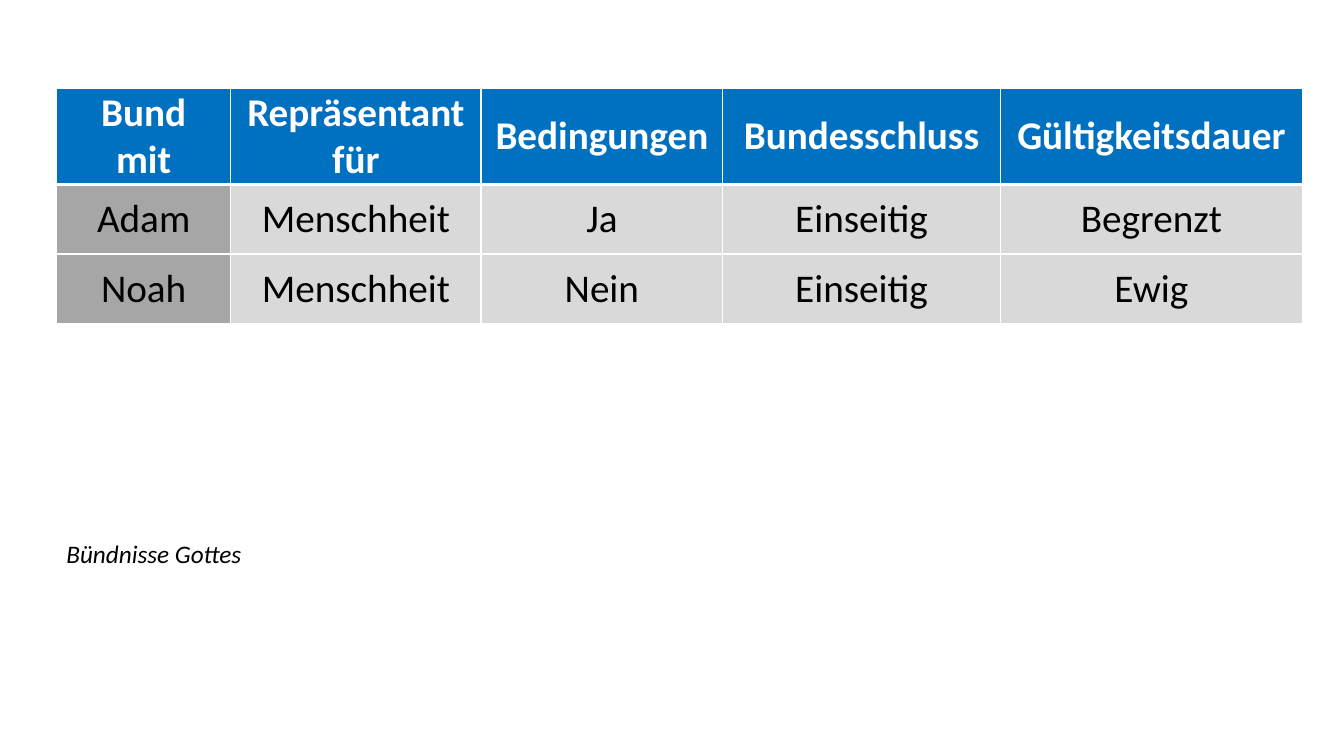
"""Build a slide with a table comparing the covenants of God."""
from lxml.etree import SubElement
from pptx import Presentation
from pptx.dml.color import RGBColor
from pptx.enum.text import MSO_ANCHOR, MSO_AUTO_SIZE, PP_ALIGN
from pptx.oxml.ns import qn
from pptx.util import Inches, Pt

WHITE = RGBColor(0xFF, 0xFF, 0xFF)
BLACK = RGBColor(0x00, 0x00, 0x00)
BLUE = RGBColor(0x00, 0x70, 0xC0)
DARK_GRAY = RGBColor(0xA6, 0xA6, 0xA6)
LIGHT_GRAY = RGBColor(0xD9, 0xD9, 0xD9)

FONT = "Calibri"
LEFT = Inches(0.56)
COLUMN_WIDTHS = [1.73, 2.48, 2.4, 2.75, 3]
ROW_HEIGHTS = [0.93, 0.69, 0.69]
COVENANTS = [
    ["Bund mit", "Repräsentant für", "Bedingungen", "Bundesschluss", "Gültigkeitsdauer"],
    ["Adam", "Menschheit", "Ja", "Einseitig", "Begrenzt"],
    ["Noah", "Menschheit", "Nein", "Einseitig", "Ewig"],
]


def format_text(p, size, color, bold=False, italic=False):
    for r in p.runs:
        r.font.name = FONT
        r.font.size = Pt(size)
        r.font.color.rgb = color
        r.font.bold = bold
        r.font.italic = italic


def set_borders(cell, top, bottom):
    tcPr = cell._tc.get_or_add_tcPr()
    for side, width in (("L", 1), ("R", 1), ("T", top), ("B", bottom)):
        ln = SubElement(tcPr, qn(f"a:ln{side}"), w=str(Pt(width)))
        fill = SubElement(ln, qn("a:solidFill"))
        SubElement(fill, qn("a:srgbClr"), val=str(WHITE))


def fill_cell(cell, text, row, col):
    header = row == 0
    set_borders(cell, top=3 if row == 1 else 1, bottom=3 if header else 1)
    cell.fill.solid()
    cell.fill.fore_color.rgb = BLUE if header else DARK_GRAY if col == 0 else LIGHT_GRAY
    cell.vertical_anchor = MSO_ANCHOR.MIDDLE
    cell.margin_left = cell.margin_right = Inches(0.14)
    cell.margin_top = cell.margin_bottom = 0
    p = cell.text_frame.paragraphs[0]
    p.text = text
    p.alignment = PP_ALIGN.CENTER
    format_text(p, 28, WHITE if header else BLACK, bold=header)


def add_covenant_table(s):
    table = s.shapes.add_table(
        len(ROW_HEIGHTS), len(COLUMN_WIDTHS), LEFT, Inches(0.88),
        Inches(sum(COLUMN_WIDTHS)), Inches(sum(ROW_HEIGHTS))).table
    for column, width in zip(table.columns, COLUMN_WIDTHS):
        column.width = Inches(width)
    for row, height in zip(table.rows, ROW_HEIGHTS):
        row.height = Inches(height)
    for i, texts in enumerate(COVENANTS):
        for j, text in enumerate(texts):
            fill_cell(table.cell(i, j), text, i, j)


def add_caption(s, text):
    tf = s.shapes.add_textbox(LEFT, Inches(5.29), Inches(1.96), Inches(0.4)).text_frame
    tf.word_wrap = False
    tf.auto_size = MSO_AUTO_SIZE.SHAPE_TO_FIT_TEXT
    tf.text = text
    format_text(tf.paragraphs[0], 18, BLACK, italic=True)


def main():
    prs = Presentation()
    prs.slide_width = Inches(13.33)
    prs.slide_height = Inches(7.5)
    s = prs.slides.add_slide(prs.slide_layouts[6])
    add_covenant_table(s)
    add_caption(s, "Bündnisse Gottes")
    prs.save("out.pptx")


if __name__ == "__main__":
    main()
